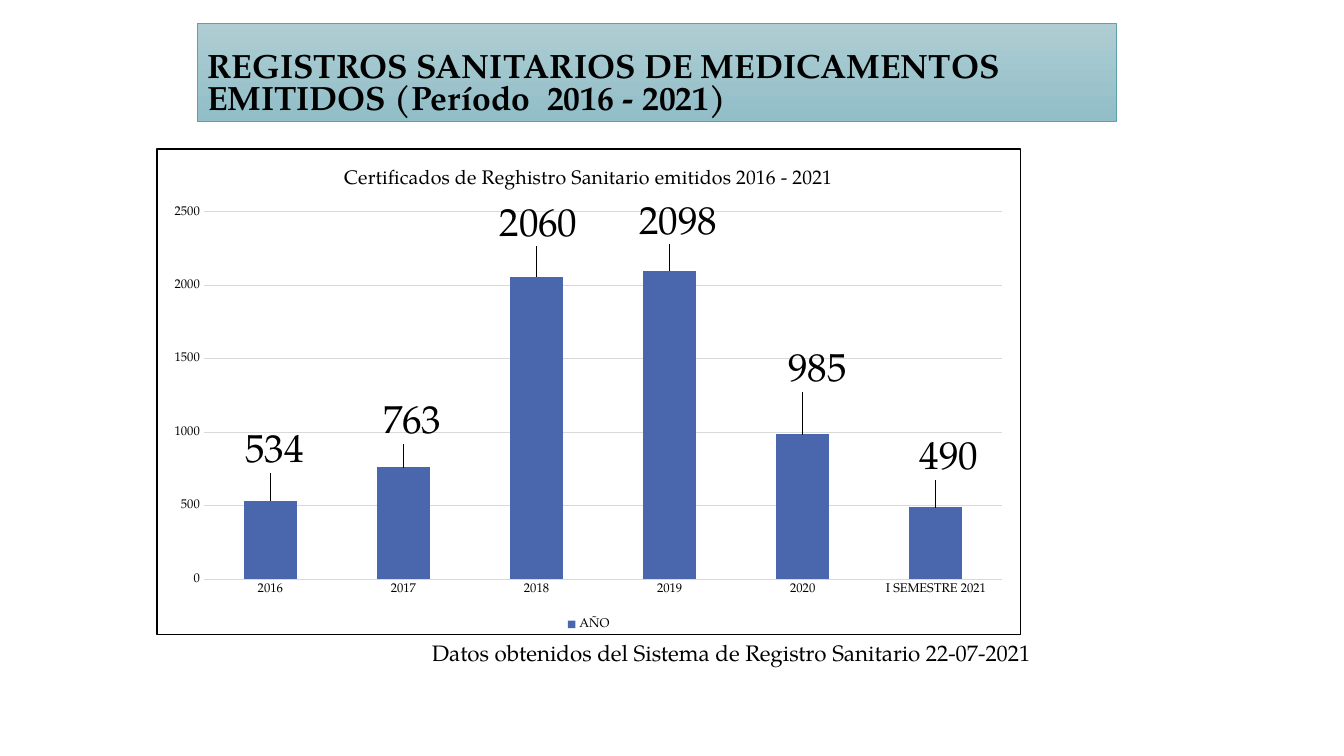
from pptx import Presentation
from pptx.chart.data import CategoryChartData
from pptx.dml.color import RGBColor
from pptx.enum.chart import XL_CHART_TYPE as ChartType, XL_LABEL_POSITION as LabelPos
from pptx.enum.chart import XL_LEGEND_POSITION as LegendPos, XL_TICK_MARK as TickMark
from pptx.enum.text import MSO_ANCHOR as Anchor, MSO_AUTO_SIZE as AutoSize, PP_ALIGN as Align
from pptx.oxml import parse_xml
from pptx.oxml.ns import nsdecls, qn
from pptx.util import Cm, Pt
from lxml.etree import SubElement

FONT = "TeX Gyre Pagella"
CHART_WIDTH, CHART_HEIGHT = 21.79, 12.27
CERTIFICATES = [
    ("2016", 534, 0.11, -0.6),
    ("2017", 763, 0.22, -0.48),
    ("2018", 2060, 0.05, -0.66),
    ("2019", 2098, 0.22, -0.56),
    ("2020", 985, 0.37, -0.97),
    ("I SEMESTRE 2021", 490, 0.33, -0.58),
]


def rgb(value):
    """Turn a hex string into a colour."""
    return RGBColor.from_string(value)


def style_font(font, size, bold=False):
    """Apply the slide's typeface in black."""
    font.name, font.size, font.bold = FONT, Pt(size), bold
    font.color.rgb = rgb("000000")


def add_run(p, text, size, bold=False):
    """Append a styled run to a paragraph."""
    r = p.add_run()
    r.text = text
    style_font(r.font, size, bold)


def place(sp, left, top, width, height):
    """Position a shape, in centimetres."""
    sp.left, sp.top, sp.width, sp.height = map(Cm, (left, top, width, height))


def fill_title(sp, text):
    """Format the title placeholder as a gradient banner."""
    place(sp, 4.97, 0.59, 23.16, 2.48)
    sp.fill.gradient()
    sp.fill.gradient_angle = 270
    for stop, color in zip(sp.fill.gradient_stops, ("AFCDD3", "91BEC7")):
        stop.color.rgb = rgb(color)
    sp.line.color.rgb = rgb("5AA2AE")
    sp.line.width = Pt(0.5)
    tf = sp.text_frame
    tf.auto_size, tf.word_wrap = AutoSize.NONE, True
    tf.vertical_anchor = Anchor.BOTTOM
    p = tf.paragraphs[0]
    p.alignment, p.line_spacing = Align.LEFT, 0.8
    add_run(p, text, 24, bold=True)


def add_note(slide, text):
    """Add the centred source note."""
    sp = slide.shapes.add_textbox(Cm(9.73), Cm(15.98), Cm(17.4), Cm(0.94))
    tf = sp.text_frame
    tf.word_wrap = True
    p = tf.paragraphs[0]
    p.alignment = Align.CENTER
    add_run(p, text, 16)


def manual_layout(x, y, **values):
    """Build a chart layout from centimetres within the chart."""
    layout = parse_xml(f"<c:layout {nsdecls('c')}><c:manualLayout/></c:layout>")
    values.update(x=x / CHART_WIDTH, y=y / CHART_HEIGHT)
    for tag in ("layoutTarget", "xMode", "yMode", "x", "y", "w", "h"):
        if tag in values:
            SubElement(layout[0], qn(f"c:{tag}")).set("val", str(values[tag]))
    return layout


def frame_chart(chart):
    """Give the chart area a white fill and a black border."""
    chart._chartSpace.find(qn("c:txPr")).addprevious(parse_xml(
        f"<c:spPr {nsdecls('c', 'a')}>"
        '<a:solidFill><a:srgbClr val="FFFFFF"/></a:solidFill>'
        '<a:ln w="12700"><a:solidFill><a:srgbClr val="000000"/></a:solidFill></a:ln>'
        "</c:spPr>"))


def style_axes(chart):
    """Format both axes and the gridlines."""
    for axis in (chart.category_axis, chart.value_axis):
        axis.major_tick_mark = axis.minor_tick_mark = TickMark.NONE
        axis.format.line.fill.background()
        style_font(axis.tick_labels.font, 9)
    axis = chart.value_axis
    axis.minimum_scale, axis.maximum_scale, axis.major_unit = 0, 2500, 500
    grid = axis.major_gridlines.format.line
    grid.color.rgb, grid.width = rgb("D9D9D9"), Pt(0.75)


def label_bars(series):
    """Show each value above its bar, shifted by its own offset."""
    labels = series.data_labels
    labels.show_value, labels.position = True, LabelPos.OUTSIDE_END
    style_font(labels.font, 28)
    for i in range(len(CERTIFICATES)):
        label = series.points[i].data_label
        style_font(label.font, 28)
        label.position = LabelPos.OUTSIDE_END
    for item, (_, _, dx, dy) in zip(labels._element.findall(qn("c:dLbl")), CERTIFICATES):
        item.find(qn("c:idx")).addnext(manual_layout(dx, dy))
    labels._element.append(parse_xml(
        f"<c:extLst {nsdecls('c')}>"
        '<c:ext uri="{CE6537A1-D6FC-4f65-9D91-7224C49458BB}" '
        'xmlns:c15="http://schemas.microsoft.com/office/drawing/2012/chart">'
        '<c15:showLeaderLines val="0"/></c:ext></c:extLst>'))


def add_column_chart(slide, title):
    """Add the column chart of issued certificates."""
    data = CategoryChartData()
    data.categories = [row[0] for row in CERTIFICATES]
    data.add_series("AÑO", [row[1] for row in CERTIFICATES])
    chart = slide.shapes.add_chart(ChartType.COLUMN_CLUSTERED, Cm(3.94), Cm(3.74),
                                   Cm(CHART_WIDTH), Cm(CHART_HEIGHT), data).chart
    style_font(chart.font, 10)
    frame_chart(chart)
    add_run(chart.chart_title.text_frame.paragraphs[0], title, 14)
    chart.chart_title.include_in_layout = False
    chart.has_legend = True
    chart.legend.position = LegendPos.BOTTOM
    chart.legend.include_in_layout = False
    style_font(chart.legend.font, 9)
    style_axes(chart)
    plot = chart.plots[0]
    plot.gap_width, plot.vary_by_categories = 150, False
    series = plot.series[0]
    series.format.fill.solid()
    series.format.fill.fore_color.rgb = rgb("4A66AC")
    label_bars(series)
    area = chart._chartSpace.chart.plotArea
    for old in area.findall(qn("c:layout")):
        area.remove(old)
    area.insert(0, manual_layout(1.18, 1.59, layoutTarget="inner", xMode="edge", yMode="edge",
                                 w=20.16 / CHART_WIDTH, h=9.28 / CHART_HEIGHT))


def main():
    """Build and save the slide."""
    prs = Presentation()
    prs.slide_width, prs.slide_height = Cm(33.87), Cm(19.05)
    slide = prs.slides.add_slide(prs.slide_layouts[5])
    fill_title(slide.shapes.title,
               "REGISTROS SANITARIOS DE MEDICAMENTOS EMITIDOS (Período  2016 - 2021)")
    add_note(slide, "Datos obtenidos del Sistema de Registro Sanitario 22-07-2021")
    add_column_chart(slide, "Certificados de Reghistro Sanitario emitidos 2016 - 2021")
    prs.save("out.pptx")


if __name__ == "__main__":
    main()
